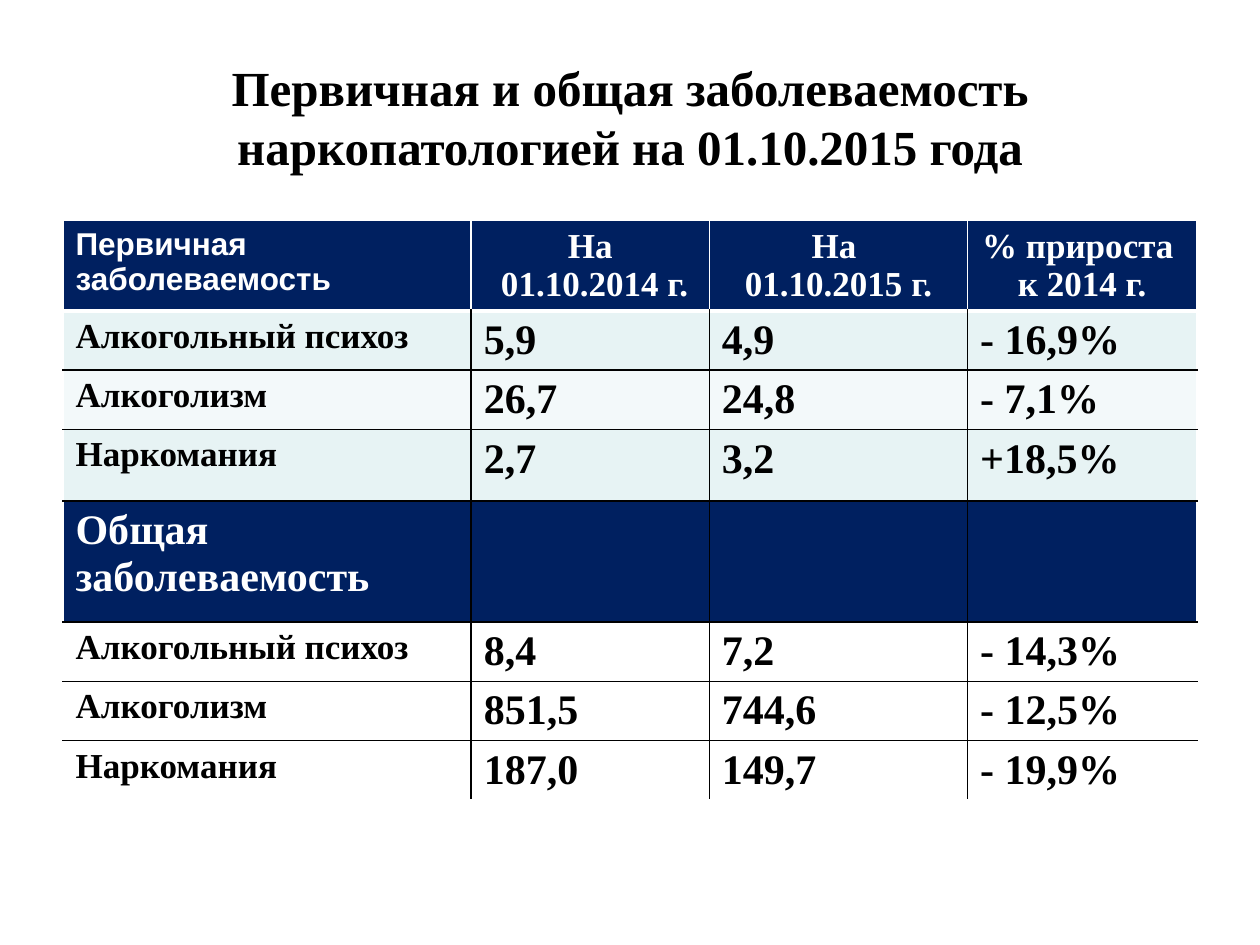
from dataclasses import dataclass

from lxml import etree
from pptx import Presentation
from pptx.dml.color import RGBColor
from pptx.enum.text import MSO_ANCHOR, PP_ALIGN
from pptx.oxml.ns import qn
from pptx.util import Inches, Pt

CENTER, LEFT = PP_ALIGN.CENTER, PP_ALIGN.LEFT
MIDDLE = MSO_ANCHOR.MIDDLE
WIDE, HIGH = Inches(10), Inches(7.5)
SERIF, SANS = "Times New Roman", "Arial"
WHITE, BLACK, NAVY = "FFFFFF", "000000", "002060"
MINT, PALE = "E7F3F4", "F3F9FA"
COLS = (0.324, 0.189, 0.205, 0.182)


@dataclass
class Row:
    """One table row: its texts, fill, height as a share, and label style."""
    texts: tuple
    fill: str
    high: float = 0.0627
    size: int = 20
    font: str = SERIF
    ink: str = BLACK


ROWS = (
    Row(("Первичная заболеваемость", "На\n 01.10.2014 г.", "На \n01.10.2015 г.",
         "% прироста \nк 2014 г."), NAVY, 0.0943, 18, SANS, WHITE),
    Row(("Алкогольный психоз", "5,9", "4,9", "- 16,9%"), MINT),
    Row(("Алкоголизм", "26,7", "24,8", "- 7,1%"), PALE),
    Row(("Наркомания", "2,7", "3,2", "+18,5%"), MINT, 0.076),
    Row(("Общая заболеваемость", "", "", ""), NAVY, 0.128, 24, SERIF, WHITE),
    Row(("Алкогольный психоз", "8,4", "7,2", "- 14,3%"), WHITE),
    Row(("Алкоголизм", "851,5", "744,6", "- 12,5%"), WHITE),
    Row(("Наркомания", "187,0", "149,7", "- 19,9%"), WHITE),
)


def color(code: str) -> RGBColor:
    """Turn a hex string into a colour."""
    return RGBColor.from_string(code)


def write(frame, text: str, size: int, ink: str, font: str = SERIF, align=LEFT) -> None:
    """Write bold text, one paragraph for each line."""
    for i, line in enumerate(text.split("\n")):
        para = frame.add_paragraph() if i else frame.paragraphs[0]
        para.alignment = align
        run = para.add_run()
        run.text = line
        run.font.name, run.font.size, run.font.bold = font, Pt(size), True
        run.font.color.rgb = color(ink)


def border(cell, side: str, ink: str, width: int = 1) -> None:
    """Draw one side of a cell ahead of its fill."""
    props = cell._tc.get_or_add_tcPr()
    line = etree.Element(qn(f"a:ln{side}"), w=str(Pt(width)))
    fill = etree.SubElement(line, qn("a:solidFill"))
    etree.SubElement(fill, qn("a:srgbClr"), val=ink)
    props.insert(len(props) - 1, line)


def edge(cell, r: int, c: int) -> None:
    """Rule a cell: white outside and round the header, black within."""
    head = r == 0
    white = {"L": head or c == 0, "R": head or c == len(COLS) - 1,
             "T": r < 2, "B": head or r == len(ROWS) - 1}
    for side, plain in white.items():
        heavy = (head and side == "B") or (r == 1 and side == "T")
        border(cell, side, WHITE if plain else BLACK, 3 if heavy else 1)


def title(slide, text: str) -> None:
    """Add the centred heading."""
    box = slide.shapes.add_textbox(int(WIDE * 0.05), int(HIGH * 0.04),
                                   int(WIDE * 0.9), Inches(1.25))
    frame = box.text_frame
    frame.word_wrap, frame.vertical_anchor = True, MIDDLE
    write(frame, text, 28, BLACK, align=CENTER)


def grid(slide) -> None:
    """Add the table of rates."""
    high = sum(row.high for row in ROWS)
    table = slide.shapes.add_table(len(ROWS), len(COLS), int(WIDE * 0.05), Inches(1.75),
                                   int(WIDE * 0.9), int(HIGH * high)).table
    for col, share in zip(table.columns, COLS):
        col.width = int(WIDE * share)
    for r, row in enumerate(ROWS):
        table.rows[r].height = int(HIGH * row.high)
        for c, text in enumerate(row.texts):
            cell = table.cell(r, c)
            cell.margin_bottom = 0
            cell.fill.solid()
            cell.fill.fore_color.rgb = color(row.fill)
            edge(cell, r, c)
            if c == 0:
                write(cell.text_frame, text, row.size, row.ink, row.font)
            elif text:
                write(cell.text_frame, text, 24 if r else 20, row.ink,
                      align=LEFT if r else CENTER)


def main() -> None:
    """Build and save the slide."""
    deck = Presentation()
    deck.slide_width, deck.slide_height = WIDE, HIGH
    slide = deck.slides.add_slide(deck.slide_layouts[6])
    title(slide, "Первичная и общая заболеваемость наркопатологией на 01.10.2015 года")
    grid(slide)
    deck.save("out.pptx")


if __name__ == "__main__":
    main()
